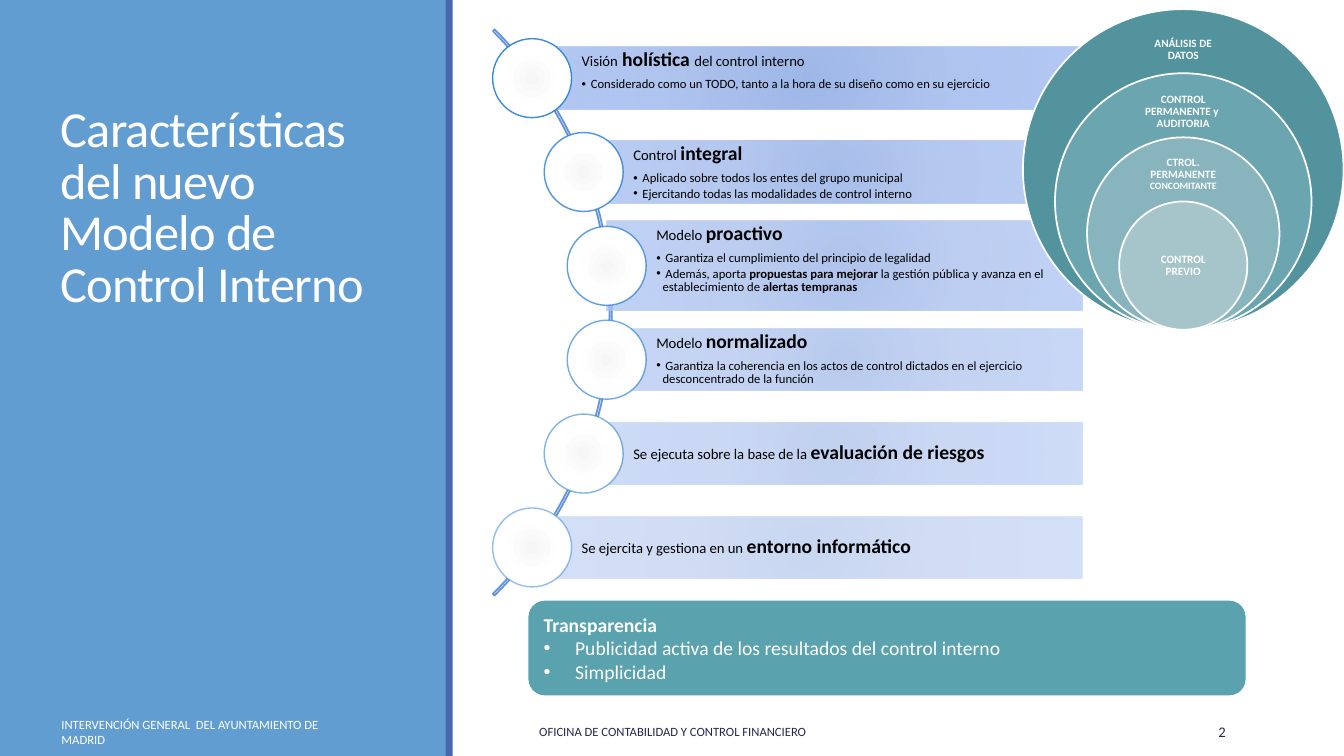
from dataclasses import dataclass

import lxml.etree
import pptx
import pptx.dml.color
import pptx.enum.shapes
import pptx.enum.text
import pptx.oxml
import pptx.oxml.ns
import pptx.util

Cm = pptx.util.Cm
Pt = pptx.util.Pt
qn = pptx.oxml.ns.qn
SHAPE = pptx.enum.shapes.MSO_SHAPE
ANCHOR = pptx.enum.text.MSO_ANCHOR
ALIGN = pptx.enum.text.PP_ALIGN


@dataclass(frozen=True)
class Theme:
    font: str = "Calibri"
    panel: str = "629DD1"
    stripe: str = "4A66AC"
    arc: str = "6393DA"
    node_line: str = "297FD5"
    teal: str = "5AA2AE"
    white: str = "FFFFFF"
    black: str = "000000"
    navy: str = "242852"
    band_stops: tuple = ((0, "94B0E6"), (45, "A6BDEC"), (100, "ABC3F3"))
    node_stops: tuple = ((0, "F6F6F6"), (45, "FEFEFE"), (100, "FFFFFF"))
    title: float = 36
    strong: float = 14
    lead: float = 10.5
    detail: float = 9
    ring: float = 8
    ring_small: float = 7


THEME = Theme()


@dataclass(frozen=True)
class Span:
    text: str
    size: float
    bold: bool = False


@dataclass(frozen=True)
class Para:
    spans: tuple[Span, ...]
    align: ALIGN = ALIGN.LEFT
    level: int = 0
    hang: float = 0
    spacing: float = 1
    after: float = 0


@dataclass(frozen=True)
class Feature:
    center_x: float
    paras: tuple[Para, ...]
    height: float = 1.57


@dataclass(frozen=True)
class Ring:
    color: str
    label_top: float
    label_height: float
    lines: tuple[Span, ...]


@dataclass(frozen=True)
class Footer:
    left: float
    width: float
    color: str
    para: Para


def lead(*spans: Span) -> Para:
    return Para(spans, spacing=0.9, after=4.9)


def detail(*spans: Span) -> Para:
    return Para(spans, level=1, hang=0.16, spacing=0.9, after=1.35)


def plain(text: str, size: float = THEME.lead) -> Span:
    return Span(text, size)


def strong(text: str, size: float = THEME.strong) -> Span:
    return Span(text, size, True)


def small(text: str, bold: bool = False) -> Span:
    return Span(text, THEME.detail, bold)


def ring_text(text: str, size: float = THEME.ring) -> Span:
    return Span(text, size, True)


FEATURES = (
    Feature(13.41, (
        lead(plain("Visión"), plain(" ", THEME.strong), strong("holística "), plain("del control interno")),
        detail(small(" Considerado como un TODO, tanto a la hora de su diseño como en su ejercicio")))),
    Feature(14.71, (
        lead(plain("Control "), strong("integral")),
        detail(small(" Aplicado sobre todos los entes del grupo municipal")),
        detail(small(" Ejercitando todas las modalidades de control interno")))),
    Feature(15.29, (
        lead(plain("Modelo "), strong("proactivo")),
        detail(small(" Garantiza el cumplimiento del principio de legalidad")),
        detail(small(" Además, aporta "), small("propuestas para mejorar ", True),
               small("la gestión pública y avanza en el establecimiento de "),
               small("alertas tempranas", True))), 2.26),
    Feature(15.29, (
        lead(plain("Modelo "), strong("normalizado")),
        detail(small(" Garantiza la coherencia en los actos de control dictados en el ejercicio "
                     "desconcentrado de la función")))),
    Feature(14.71, (lead(plain("Se ejecuta sobre la base de la "), strong("evaluación de riesgos")),)),
    Feature(13.41, (lead(plain("Se ejercita y gestiona en un "), strong("entorno informático")),)),
)
RINGS = (
    Ring("52939E", 0.64, 1.22, (ring_text("ANÁLISIS DE DATOS"),)),
    Ring("6BA5B0", 2.24, 1.17, (ring_text("CONTROL PERMANENTE y "), ring_text("AUDITORIA"))),
    Ring("88B4BD", 3.84, 1.09, (ring_text("CTROL. PERMANENTE"), ring_text("CONCOMITANTE", THEME.ring_small))),
    Ring("A5C5CB", 5.89, 1.63, (ring_text("CONTROL PREVIO"),)),
)
FOOTERS = (
    Footer(1.3, 7.26, THEME.white, Para((small("INTERVENCIÓN GENERAL  DEL AYUNTAMIENTO DE MADRID"),))),
    Footer(13.34, 12.9, THEME.navy, Para((small("OFICINA DE CONTABILIDAD Y CONTROL FINANCIERO"),))),
    Footer(27.51, 3.63, THEME.navy, Para((plain("2"),), ALIGN.RIGHT)),
)
TRANSPARENCY = (
    Para((strong("Transparencia"),)),
    *(Para((plain(text, THEME.strong),), ALIGN.JUSTIFY, hang=0.79)
      for text in ("Publicidad activa de los resultados del control interno", "Simplicidad")),
)


def rgb(color: str) -> pptx.dml.color.RGBColor:
    return pptx.dml.color.RGBColor.from_string(color)


def write(frame, paras: tuple[Para, ...], color: str, anchor: ANCHOR = ANCHOR.MIDDLE,
          insets: tuple | None = None, breaks: bool = False) -> None:
    frame.word_wrap = True
    frame.auto_size = pptx.enum.text.MSO_AUTO_SIZE.NONE
    frame.vertical_anchor = anchor
    if insets:
        frame.margin_left, frame.margin_top, frame.margin_right, frame.margin_bottom = map(Cm, insets)
    for index, para in enumerate(paras):
        paragraph = frame.add_paragraph() if index else frame.paragraphs[0]
        paragraph.alignment, paragraph.level = para.align, para.level
        paragraph.line_spacing, paragraph.space_after = para.spacing, Pt(para.after)
        if para.hang:
            props = paragraph._p.get_or_add_pPr()
            props.set("marL", str(Cm(para.hang)))
            props.set("indent", str(-Cm(para.hang)))
            lxml.etree.SubElement(props, qn("a:buFont")).set("typeface", "Arial")
            lxml.etree.SubElement(props, qn("a:buChar")).set("char", "•")
        for position, span in enumerate(para.spans):
            if breaks and position:
                paragraph.add_line_break()
            run = paragraph.add_run()
            run.text = span.text
            run.font.name, run.font.size, run.font.bold = THEME.font, Pt(span.size), span.bold
            run.font.color.rgb = rgb(color)


def draw(slide, kind: SHAPE, left: float, top: float, width: float, height: float,
         fill: str | None = None, line: str | None = None, weight: float = 1.25):
    shape = slide.shapes.add_shape(kind, Cm(left), Cm(top), Cm(width), Cm(height))
    shape.shadow.inherit = False
    if fill:
        shape.fill.solid()
        shape.fill.fore_color.rgb = rgb(fill)
    else:
        shape.fill.background()
    if line:
        shape.line.color.rgb = rgb(line)
        shape.line.width = Pt(weight)
    else:
        shape.line.fill.background()
    return shape


def set_alpha(color_element, percent: int) -> None:
    lxml.etree.SubElement(color_element, qn("a:alpha")).set("val", str(percent * 1000))


def radial_fill(shape, stops: tuple, opacity: int = 100) -> None:
    gradient = lxml.etree.Element(qn("a:gradFill"), rotWithShape="1")
    stop_list = lxml.etree.SubElement(gradient, qn("a:gsLst"))
    for position, color in stops:
        stop = lxml.etree.SubElement(stop_list, qn("a:gs"), pos=str(position * 1000))
        set_alpha(lxml.etree.SubElement(stop, qn("a:srgbClr"), val=color), opacity)
    circle = lxml.etree.SubElement(gradient, qn("a:path"), path="circle")
    lxml.etree.SubElement(circle, qn("a:fillToRect"), l="100000", t="100000", r="100000", b="100000")
    properties = shape._element.spPr
    properties.replace(properties.find(qn("a:noFill")), gradient)


def draw_feature(slide, feature: Feature, index: int) -> None:
    center_y, diameter, right = 1.97 + 2.365 * index, 1.99, 27.29
    opacity = 90 - 8 * index
    band = draw(slide, SHAPE.RECTANGLE, feature.center_x, center_y - feature.height / 2,
                right - feature.center_x, feature.height)
    radial_fill(band, THEME.band_stops, opacity)
    anchor = ANCHOR.TOP if len(feature.paras) > 1 else ANCHOR.MIDDLE
    write(band.text_frame, feature.paras, THEME.black, anchor, (1.25, 0.07, 0.07, 0.07))
    node = draw(slide, SHAPE.OVAL, feature.center_x - diameter / 2, center_y - diameter / 2,
                diameter, diameter, line=THEME.node_line, weight=1)
    radial_fill(node, THEME.node_stops)
    set_alpha(node._element.spPr.find(qn("a:ln")).find(".//" + qn("a:srgbClr")), opacity)


def draw_ring(slide, ring: Ring, index: int) -> None:
    center_x, bottom, label_width = 29.82, 8.31, 2.27
    diameter = 8.08 * (1 - 0.2 * index)
    draw(slide, SHAPE.OVAL, center_x - diameter / 2, bottom - diameter, diameter, diameter,
         ring.color, THEME.white)
    label = slide.shapes.add_textbox(Cm(center_x - label_width / 2), Cm(ring.label_top),
                                     Cm(label_width), Cm(ring.label_height))
    write(label.text_frame, (Para(ring.lines, ALIGN.CENTER, spacing=0.9),), THEME.white,
          insets=(0.15,) * 4, breaks=True)


def main() -> None:
    deck = pptx.Presentation()
    deck.slide_width, deck.slide_height = Cm(33.87), Cm(19.05)
    slide = deck.slides.add_slide(deck.slide_layouts[5])
    draw(slide, SHAPE.RECTANGLE, 0, 0, 11.25, 19.05, THEME.panel)
    draw(slide, SHAPE.RECTANGLE, 11.23, 0, 0.18, 19.05, THEME.stripe)

    title = slide.shapes.title
    slide.shapes._spTree.append(title._element)
    title.left, title.top, title.width, title.height = Cm(1.27), Cm(1.65), Cm(8.89), Cm(6.35)
    heading = Para((plain("Características del nuevo Modelo de Control Interno", THEME.title),), spacing=0.85)
    write(title.text_frame, (heading,), THEME.white, ANCHOR.BOTTOM)
    title.text_frame.paragraphs[0].runs[0].font._element.set("spc", "-50")

    arc = draw(slide, SHAPE.BLOCK_ARC, -4.75, -2.21, 20.17, 20.17, line=THEME.arc)
    for position, value in enumerate((189, 27, 0.003)):
        arc.adjustments[position] = value
    for index, feature in enumerate(FEATURES):
        draw_feature(slide, feature, index)
    for footer in FOOTERS:
        box = slide.shapes.add_textbox(Cm(footer.left), Cm(17.93), Cm(footer.width), Cm(1.02))
        write(box.text_frame, (footer.para,), footer.color)
    for index, ring in enumerate(RINGS):
        draw_ring(slide, ring, index)
    transparency = draw(slide, SHAPE.ROUNDED_RECTANGLE, 13.34, 15.16, 18.03, 2.34, THEME.teal, THEME.teal)
    write(transparency.text_frame, TRANSPARENCY, THEME.white)
    deck.save("out.pptx")


if __name__ == "__main__":
    main()
